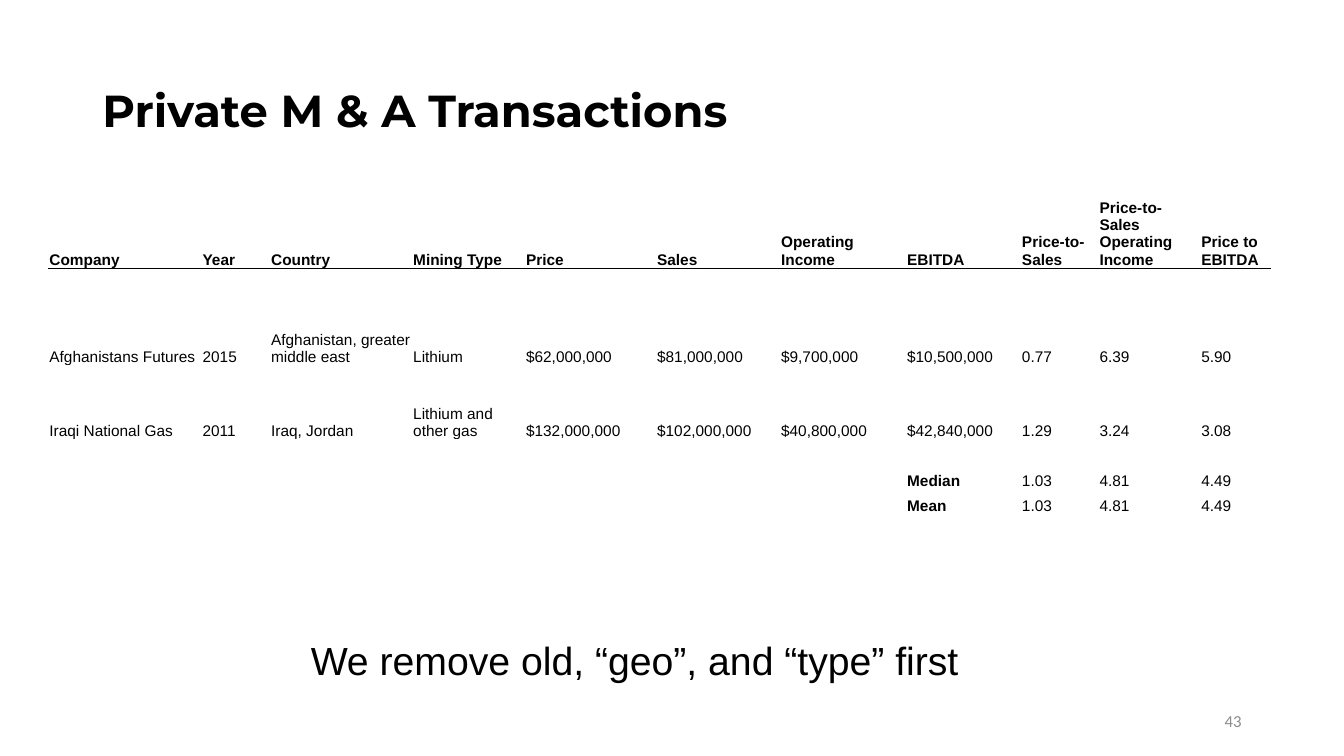
from lxml.etree import SubElement
from pptx import Presentation
from pptx.dml.color import RGBColor
from pptx.enum.text import MSO_ANCHOR, PP_ALIGN
from pptx.oxml import parse_xml
from pptx.oxml.ns import nsdecls, qn
from pptx.util import Pt

BLACK, WHITE, GREY = "000000", "FFFFFF", "8C8C8C"
TABLE_SIZE = 11

COLUMN_WIDTHS = [109.4, 49, 101.5, 80.6, 93.6, 88.6, 90, 82.1, 55.4, 72.7, 49.7]
ROW_HEIGHTS = [70.6, 18, 51.8, 18, 34.6, 18, 18, 18]
SUMMARY_LABELS = ("Median", "Mean")
TRANSACTIONS = [
    ["Company", "Year", "Country", "Mining Type", "Price", "Sales",
     "Operating Income", "EBITDA", "Price-to-Sales",
     "Price-to-Sales Operating Income", "Price to EBITDA"],
    [""] * 11,
    ["Afghanistans Futures", "2015", "Afghanistan, greater middle east", "Lithium",
     "$62,000,000", "$81,000,000", "$9,700,000", "$10,500,000", "0.77", "6.39", "5.90"],
    [""] * 11,
    ["Iraqi National Gas", "2011", "Iraq, Jordan", "Lithium and other gas",
     "$132,000,000", "$102,000,000", "$40,800,000", "$42,840,000", "1.29", "3.24", "3.08"],
    [""] * 11,
    [""] * 7 + ["Median", "1.03", "4.81", "4.49"],
    [""] * 7 + ["Mean", "1.03", "4.81", "4.49"],
]


def rgb(code):
    return RGBColor.from_string(code)


def style_text(paragraph, size, font, color=BLACK, bold=False):
    for run in paragraph.runs:
        run.font.size = Pt(size)
        run.font.name = font
        run.font.bold = bold
        run.font.color.rgb = rgb(color)


def add_text(slide, text, box, size, font, color=BLACK, bold=False,
             align=PP_ALIGN.LEFT, anchor=MSO_ANCHOR.MIDDLE, wrap=True, spacing=1.0):
    frame = slide.shapes.add_textbox(*map(Pt, box)).text_frame
    frame.text = text
    frame.word_wrap = wrap
    frame.vertical_anchor = anchor
    paragraph = frame.paragraphs[0]
    paragraph.alignment = align
    paragraph.line_spacing = spacing
    style_text(paragraph, size, font, color, bold)


def add_rule(cell, side):
    """Draw a thin black border on one side of a cell."""
    rule = parse_xml(
        f'<a:{side} {nsdecls("a")} w="{Pt(0.5)}"><a:solidFill>'
        f'<a:srgbClr val="{BLACK}"/></a:solidFill></a:{side}>')
    cell._tc.get_or_add_tcPr().insert(0, rule)


def fill_cell(cell, text, bold):
    cell.fill.solid()
    cell.fill.fore_color.rgb = rgb(WHITE)
    cell.vertical_anchor = MSO_ANCHOR.BOTTOM
    cell.margin_left = cell.margin_right = cell.margin_top = Pt(0.7)
    cell.margin_bottom = Pt(0)
    paragraph = cell.text_frame.paragraphs[0]
    if text:
        paragraph.text = text
        style_text(paragraph, TABLE_SIZE, "Arial", bold=bold)
    else:
        # Small end mark keeps empty rows at their height
        SubElement(paragraph._p, qn("a:endParaRPr"), sz=str(TABLE_SIZE * 100))


def add_transactions(slide, left, top):
    table = slide.shapes.add_table(
        len(ROW_HEIGHTS), len(COLUMN_WIDTHS), Pt(left), Pt(top),
        Pt(sum(COLUMN_WIDTHS)), Pt(sum(ROW_HEIGHTS))).table
    table.first_row = table.horz_banding = False
    for column, width in zip(table.columns, COLUMN_WIDTHS):
        column.width = Pt(width)
    for row, height in zip(table.rows, ROW_HEIGHTS):
        row.height = Pt(height)
    for r, values in enumerate(TRANSACTIONS):
        for c, value in enumerate(values):
            cell = table.cell(r, c)
            fill_cell(cell, value, bold=r == 0 or value in SUMMARY_LABELS)
            # Rule between the header and the first row
            if r < 2:
                add_rule(cell, ("lnB", "lnT")[r])


def main():
    deck = Presentation()
    deck.slide_width, deck.slide_height = Pt(960), Pt(540)
    slide = deck.slides.add_slide(deck.slide_layouts[6])

    # Title
    add_text(slide, "Private M & A Transactions", (66, 28.8, 828, 104.4),
             32, "Montserrat", bold=True, spacing=0.9)

    # Closing remark
    add_text(slide, "We remove old, “geo”, and “type” first", (211.7, 450.7, 483.1, 41),
             28, "Arial", align=PP_ALIGN.CENTER, anchor=MSO_ANCHOR.TOP, wrap=False)

    # Slide number
    add_text(slide, "43", (678, 500.5, 216, 28.8), 12, "Calibri", GREY,
             align=PP_ALIGN.RIGHT)

    # Transactions with their multiples
    add_transactions(slide, 34.6, 121)

    deck.save("out.pptx")


if __name__ == "__main__":
    main()
